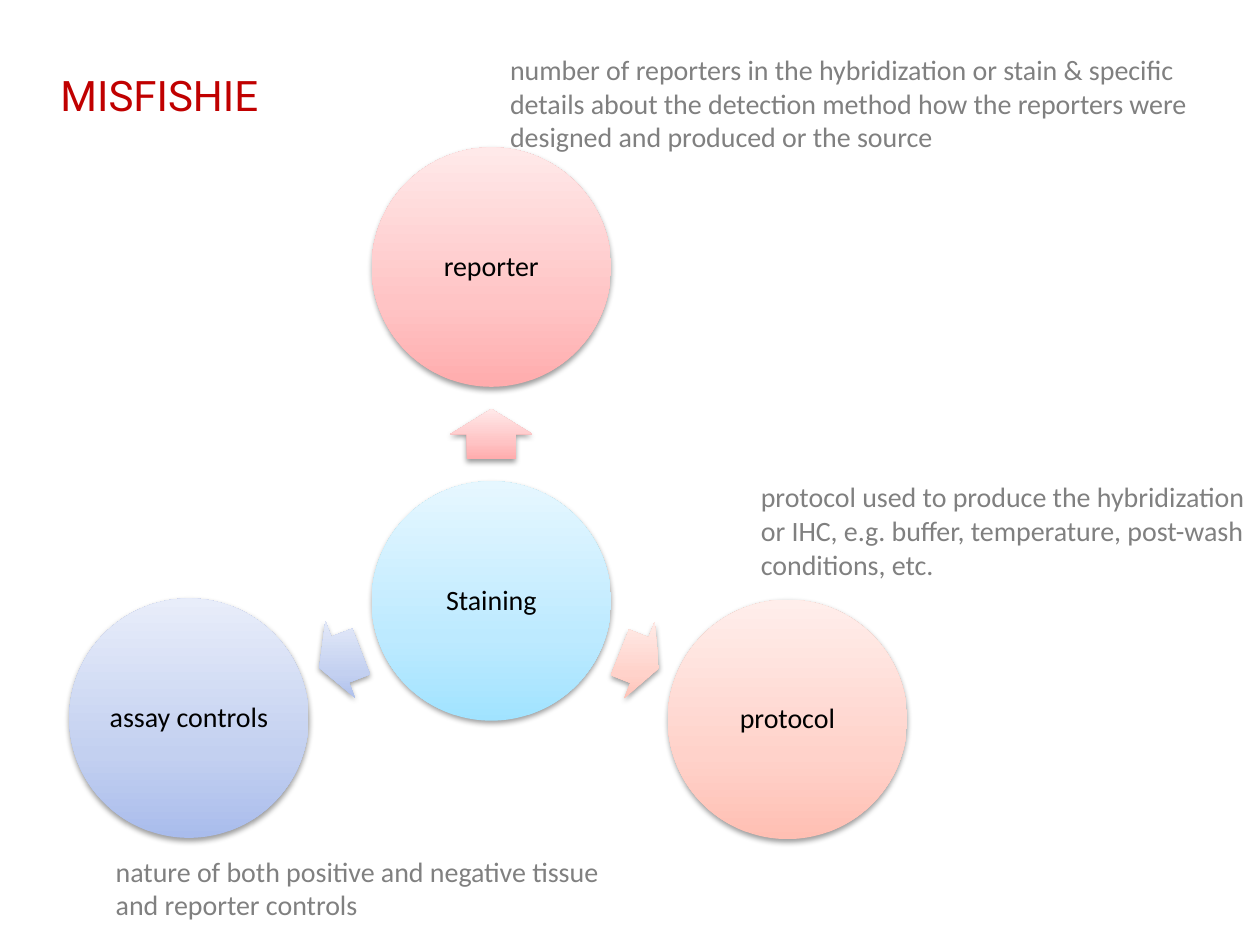
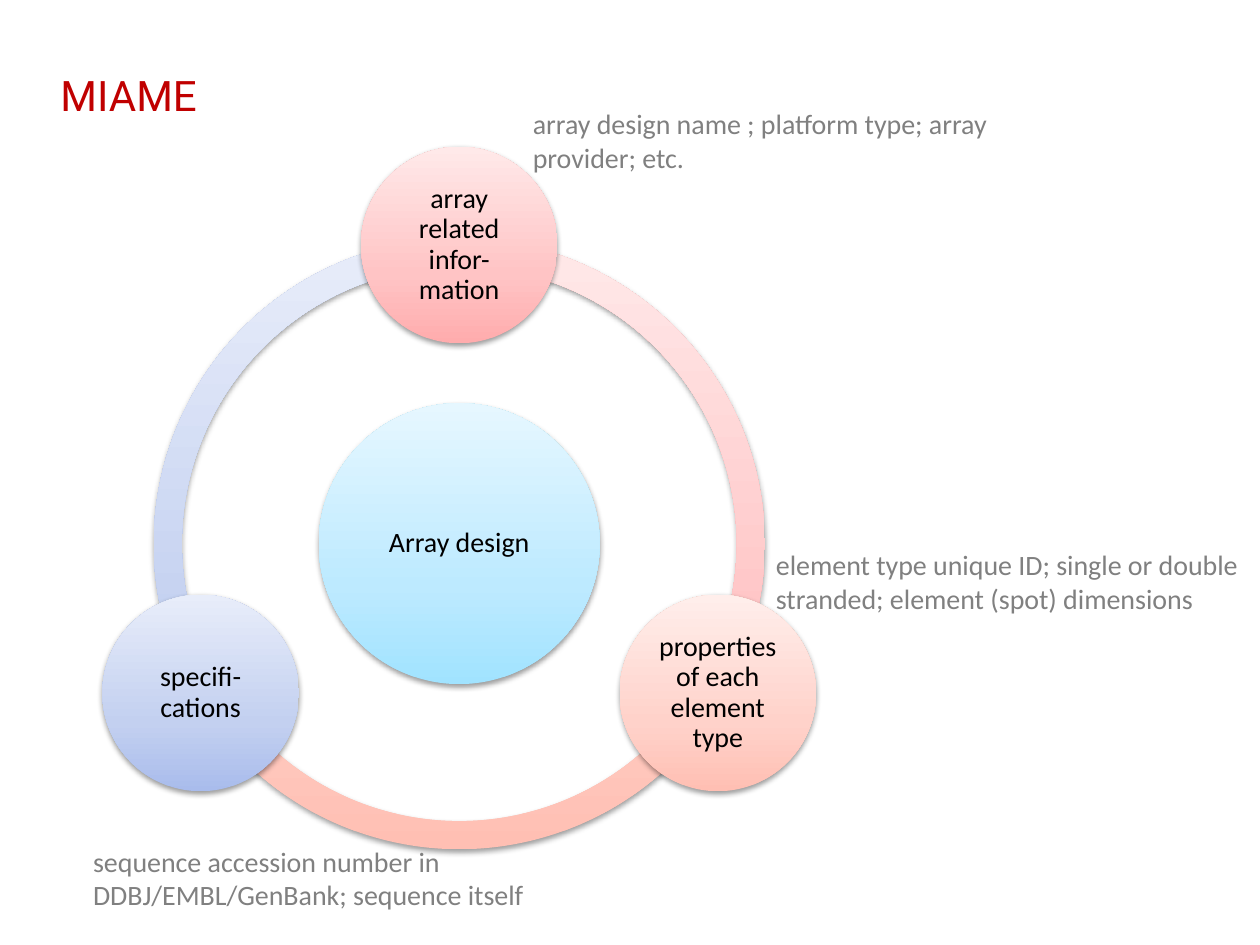
from dataclasses import dataclass
from math import atan2, cos, degrees, hypot, radians, sin

from pptx import Presentation
from pptx.dml.color import RGBColor
from pptx.enum.shapes import MSO_SHAPE as SHAPE
from pptx.enum.text import MSO_ANCHOR as ANCHOR, MSO_AUTO_SIZE as FIT, PP_ALIGN as ALIGN
from pptx.oxml import parse_xml
from pptx.oxml.ns import nsdecls, qn
from pptx.util import Pt

PX = 9144


@dataclass(frozen=True)
class Theme:
    """Colours, gradients, fonts and type sizes of the deck."""
    title: str = "C00000"
    note: str = "808080"
    label: str = "000000"
    title_font: str = "Roboto"
    body_font: str = "Calibri"
    title_size: int = 24
    body_size: int = 16
    sky: tuple = ("A1E3FF", "BDEAFF", "E6F7FF")
    rose: tuple = ("FFACAD", "FFC4C5", "FFE9E9")
    peach: tuple = ("FFBFB3", "FFD2CA", "FFEEEB")
    blue: tuple = ("A9BCEC", "C3D0F0", "E8EDFA")


T = Theme()


def emu(*lengths):
    """Turn px lengths into EMU."""
    return [round(v * PX) for v in lengths]


def add_run(p, text, font, size, color):
    """Add one formatted run to a paragraph."""
    r = p.add_run()
    r.text = text
    r.font.name = font
    r.font.size = Pt(size)
    r.font.color.rgb = RGBColor.from_string(color)


def set_insets(tf, x, y):
    """Set the side and the top and bottom insets of a text frame."""
    tf.margin_left = tf.margin_right = emu(x)[0]
    tf.margin_top = tf.margin_bottom = emu(y)[0]


def add_glossy(s, kind, cx, cy, w, h, tones):
    """Add a shape about a centre with an upward gradient and a soft shadow."""
    sp = s.shapes.add_shape(kind, *emu(cx - w / 2, cy - h / 2, w, h))
    sp.line.fill.background()
    sp.fill.gradient()
    sp.shadow.inherit = False
    sp_pr = sp._element.spPr
    stops = "".join(f'<a:gs pos="{pos}"><a:srgbClr val="{tone}"/></a:gs>'
                    for pos, tone in zip((0, 35000, 100000), tones))
    grad = parse_xml(f'<a:gradFill {nsdecls("a")} rotWithShape="0"><a:gsLst>{stops}</a:gsLst>'
                     '<a:lin ang="16200000" scaled="0"/></a:gradFill>')
    sp_pr.replace(sp_pr.find(qn("a:gradFill")), grad)
    sp_pr.find(qn("a:effectLst")).append(parse_xml(
        f'<a:outerShdw {nsdecls("a")} blurRad="40000" dist="20000" dir="5400000" rotWithShape="0">'
        '<a:srgbClr val="000000"><a:alpha val="38000"/></a:srgbClr></a:outerShdw>'))
    return sp


def add_circle(s, cx, cy, d, tones, text):
    """Add a labelled circle."""
    tf = add_glossy(s, SHAPE.OVAL, cx, cy, d, d, tones).text_frame
    tf.word_wrap = True
    tf.vertical_anchor = ANCHOR.MIDDLE
    set_insets(tf, 2, 2)
    p = tf.paragraphs[0]
    p.alignment = ALIGN.CENTER
    p.line_spacing = 0.9
    add_run(p, text, T.body_font, T.body_size, T.label)


def add_note(s, box, *lines):
    """Add a grey note with one paragraph per line."""
    tf = s.shapes.add_textbox(*emu(*box)).text_frame
    tf.word_wrap = True
    tf.auto_size = FIT.SHAPE_TO_FIT_TEXT
    for i, line in enumerate(lines):
        p = tf.add_paragraph() if i else tf.paragraphs[0]
        add_run(p, line, T.body_font, T.body_size, T.note)


def add_titled_slide(prs, text):
    """Add a slide with its title placed and styled."""
    s = prs.slides.add_slide(prs.slide_layouts[5])
    title = s.shapes.title
    title.left, title.top, title.width, title.height = emu(38, 55, 812, 81)
    tf = title.text_frame
    tf.auto_size = FIT.NONE
    tf.vertical_anchor = ANCHOR.TOP
    set_insets(tf, 10, 0)
    p = tf.paragraphs[0]
    p.alignment = ALIGN.LEFT
    add_run(p, text, T.title_font, T.title_size, T.title)
    return s


def add_radial(s, left, top, hub_text, spokes):
    """Draw a hub with an arrow towards each outer circle."""
    d = 190
    hub_x, hub_y = left + 335, top + 360
    add_circle(s, hub_x, hub_y, d, T.sky, hub_text)
    for dx, dy, tones, text in spokes:
        length = 0.53 * (hypot(dx, dy) - d)
        arrow = add_glossy(s, SHAPE.RIGHT_ARROW, hub_x + dx / 2, hub_y + dy / 2, length, 65, tones)
        arrow.rotation = degrees(atan2(dy, dx)) % 360
        arrow.adjustments[0] = 0.6
        arrow.adjustments[1] = 0.5
        add_circle(s, hub_x + dx, hub_y + dy, d, tones, text)


def add_ring(s, left, top, size, hub_text, nodes):
    """Draw a hub inside a ring of arcs, with a circle at the start of each arc."""
    cx, cy = left + size / 2, top + size / 2
    step = 360 / len(nodes)
    angles = [(270 + step * i) % 360 for i in range(len(nodes))]
    arc_tones = [tones for tones, _ in nodes]
    for angle, tones in reversed(list(zip(angles, arc_tones))):
        arc = add_glossy(s, SHAPE.BLOCK_ARC, cx, cy, size, size, tones)
        for i, value in enumerate((angle * 0.6, (angle + step) % 360 * 0.6, 0.046)):
            arc.adjustments[i] = value
    add_circle(s, cx, cy, 223, T.sky, hub_text)
    for angle, (tones, text) in zip(angles, nodes):
        a = radians(angle)
        add_circle(s, cx + 237 * cos(a), cy + 237 * sin(a), 156, tones, text)


def build_staining(prs):
    """Build the MISFISHIE slide."""
    s = add_titled_slide(prs, "MISFISHIE")
    add_radial(s, 55, 117, "Staining", [
        (0, -265, T.rose, "reporter"),
        (235, 94, T.peach, "protocol"),
        (-240, 93, T.blue, "assay controls"),
    ])
    add_note(s, (395, 37, 571, 91),
             "number of reporters in the hybridization or stain & specific details about the "
             "detection method how the reporters were designed and produced or the source")
    add_note(s, (594, 376, 421, 91),
             "protocol used to produce the hybridization or IHC, e.g. buffer, temperature, "
             "post-wash conditions, etc.")
    add_note(s, (82, 673, 421, 64),
             "nature of both positive and negative tissue", "and reporter controls")


def build_array_design(prs):
    """Build the MIAME slide."""
    s = add_titled_slide(prs, "MIAME")
    add_ring(s, 122, 189, 485, "Array design", [
        (T.rose, "array related infor-mation"),
        (T.peach, "properties of each element type"),
        (T.blue, "specifi-cations"),
    ])
    add_note(s, (413, 80, 421, 64), "array design name ; platform type; array provider; etc.")
    add_note(s, (606, 430, 421, 64),
             "element type unique ID; single or double stranded; element (spot) dimensions")
    add_note(s, (64, 665, 421, 64),
             "sequence accession number in DDBJ/EMBL/GenBank; sequence itself")


def main():
    """Build and save the deck."""
    prs = Presentation()
    prs.slide_width, prs.slide_height = emu(1000, 750)
    build_staining(prs)
    build_array_design(prs)
    prs.save("out.pptx")


if __name__ == "__main__":
    main()
